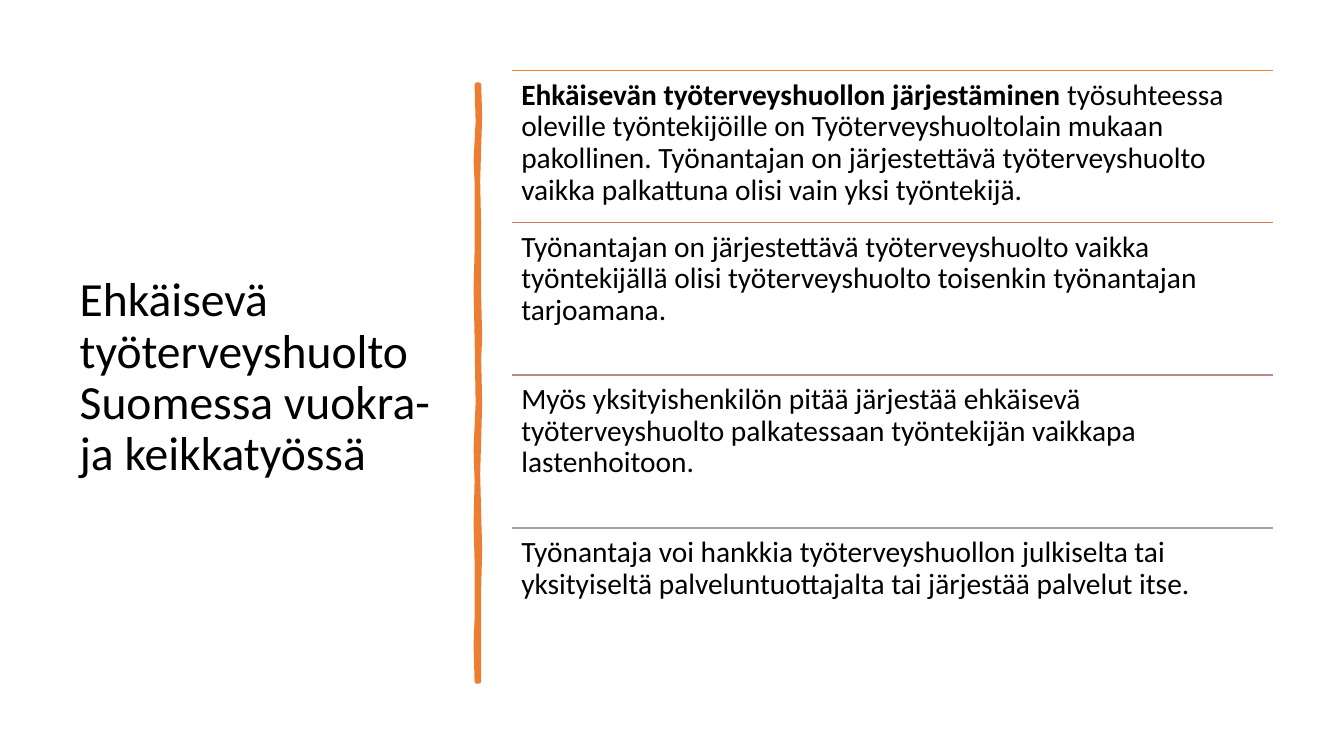
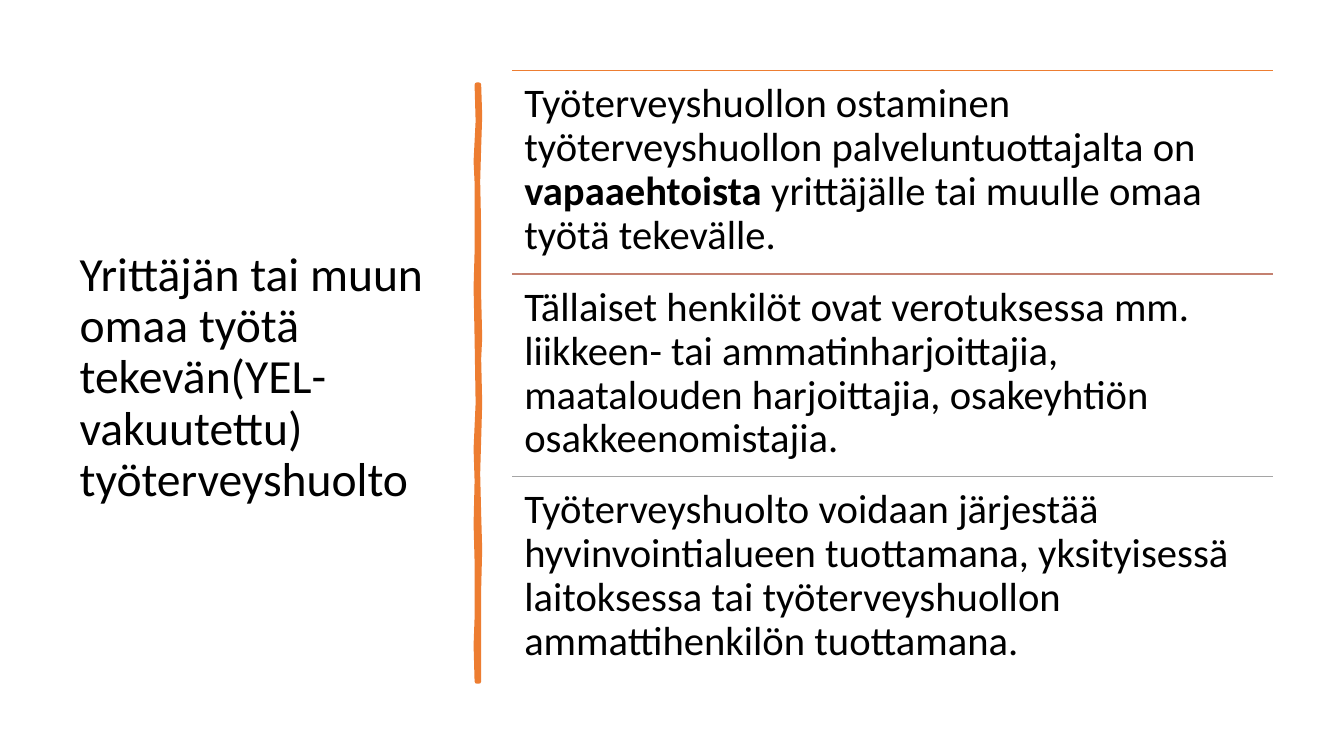
from pptx import Presentation
from pptx.dml.color import RGBColor
from pptx.enum.shapes import MSO_CONNECTOR
from pptx.enum.text import MSO_ANCHOR, MSO_AUTO_SIZE, PP_ALIGN
from pptx.oxml.ns import qn
from pptx.util import Pt
from lxml.etree import SubElement

PX = 9144
BLACK = RGBColor(0x00, 0x00, 0x00)
ORANGE = RGBColor(0xED, 0x7D, 0x31)
RUST = RGBColor(0xD1, 0x7B, 0x5C)
CLAY = RGBColor(0xC4, 0x81, 0x70)
ROSE = RGBColor(0xB9, 0x8A, 0x82)
GREY = RGBColor(0xA5, 0xA5, 0xA5)

LIST_LEFT, LIST_TOP, LIST_WIDTH, LIST_HEIGHT = 508, 70, 755, 605
RIGHT_EDGE = [(475, 84), (476, 115), (475, 146), (474, 180), (475, 226),
              (475, 294), (476, 335), (475, 356), (476, 400), (475, 436),
              (474, 470), (475, 510), (476, 545), (475, 584), (475, 676)]
LEFT_EDGE = [(473, 676), (472, 640), (473, 613), (473, 557), (472, 520),
             (473, 477), (472, 445), (474, 400), (473, 335), (472, 285),
             (473, 250), (473, 181), (472, 160), (474, 120), (473, 84)]


class Deck:
    """Holds the shared style and the slide being built."""

    def __init__(self):
        """Start an empty widescreen deck."""
        self.deck = Presentation()
        self.deck.slide_width, self.deck.slide_height = 1333 * PX, 750 * PX
        self.page = None

    def assign(self, target, values):
        """Set each attribute of the target from a dict."""
        for name, value in values.items():
            setattr(target, name, value)

    def fill_text(self, box, spans, size, anchor, inset=None):
        """Fill a box with one paragraph of (text, bold) spans."""
        frame = box.text_frame
        self.assign(frame, {"word_wrap": True, "vertical_anchor": anchor,
                            "auto_size": MSO_AUTO_SIZE.NONE})
        if inset is not None:
            sides = ("left", "top", "right", "bottom")
            self.assign(frame, {f"margin_{side}": inset * PX for side in sides})
        para = frame.paragraphs[0]
        self.assign(para, {"alignment": PP_ALIGN.LEFT, "line_spacing": 0.9})
        for text, bold in spans:
            span = para.add_run()
            span.text = text
            self.assign(span.font, {"name": "Calibri", "size": Pt(size), "bold": bold})
            span.font.color.rgb = BLACK

    def start_page(self, title):
        """Add a slide with its title at the left."""
        self.page = self.deck.slides.add_slide(self.deck.slide_layouts[5])
        box = self.page.shapes.title
        self.assign(box, {"left": 69 * PX, "top": 70 * PX,
                          "width": 374 * PX, "height": 611 * PX})
        self.fill_text(box, [(title, False)], 34, MSO_ANCHOR.MIDDLE)

    def brush_stroke(self):
        """Draw the uneven upright stroke beside the title."""
        start, *points = RIGHT_EDGE + LEFT_EDGE
        builder = self.page.shapes.build_freeform(*start, scale=PX)
        builder.add_line_segments(points, close=True)
        stroke = builder.convert_to_shape()
        stroke.shadow.inherit = False
        stroke.fill.solid()
        stroke.fill.fore_color.rgb = ORANGE
        stroke.line.color.rgb = ORANGE
        stroke.line.width = Pt(3.25)

    def rule(self, top, color):
        """Draw a thin line across the list."""
        line = self.page.shapes.add_connector(
            MSO_CONNECTOR.STRAIGHT, LIST_LEFT * PX, top * PX,
            (LIST_LEFT + LIST_WIDTH) * PX, top * PX)
        line.line.color.rgb = color
        line.line.width = Pt(1)
        SubElement(line._element.spPr, qn("a:effectLst"))

    def ruled_list(self, rows, colors, size, inset):
        """Stack rows of equal height, each under its own rule."""
        height = LIST_HEIGHT / len(rows)
        for index, (spans, color) in enumerate(zip(rows, colors)):
            top = round(LIST_TOP + index * height)
            self.rule(top, color)
            box = self.page.shapes.add_textbox(
                LIST_LEFT * PX, top * PX, LIST_WIDTH * PX, round(height) * PX)
            self.fill_text(box, spans, size, MSO_ANCHOR.TOP, inset)


PAGES = [
    {"title": "Ehkäisevä työterveyshuolto Suomessa vuokra- ja keikkatyössä",
     "colors": [ORANGE, RUST, ROSE, GREY], "size": 21, "inset": 9,
     "rows": [
         [("Ehkäisevän työterveyshuollon järjestäminen ", True),
          ("työsuhteessa oleville työntekijöille on Työterveyshuoltolain mukaan "
           "pakollinen. Työnantajan on järjestettävä työterveyshuolto vaikka "
           "palkattuna olisi vain yksi työntekijä.", False)],
         [("Työnantajan on järjestettävä työterveyshuolto vaikka työntekijällä "
           "olisi työterveyshuolto toisenkin työnantajan tarjoamana.", False)],
         [("Myös yksityishenkilön pitää järjestää ehkäisevä työterveyshuolto "
           "palkatessaan työntekijän vaikkapa lastenhoitoon.", False)],
         [("Työnantaja voi hankkia työterveyshuollon julkiselta tai yksityiseltä "
           "palveluntuottajalta tai järjestää palvelut itse.", False)]]},
    {"title": "Yrittäjän tai muun omaa työtä tekevän(YEL-vakuutettu) työterveyshuolto",
     "colors": [ORANGE, CLAY, GREY], "size": 29, "inset": 12,
     "rows": [
         [("Työterveyshuollon ostaminen työterveyshuollon palveluntuottajalta on ", False),
          ("vapaaehtoista", True),
          (" yrittäjälle tai muulle omaa työtä tekevälle.", False)],
         [("Tällaiset henkilöt ovat verotuksessa mm. liikkeen- tai "
           "ammatinharjoittajia, maatalouden harjoittajia, osakeyhtiön "
           "osakkeenomistajia.", False)],
         [("Työterveyshuolto voidaan järjestää hyvinvointialueen tuottamana, "
           "yksityisessä laitoksessa tai työterveyshuollon ammattihenkilön "
           "tuottamana.", False)]]},
]


def main():
    """Build every page and save the deck."""
    builder = Deck()
    for content in PAGES:
        builder.start_page(content["title"])
        builder.brush_stroke()
        builder.ruled_list(content["rows"], content["colors"],
                           content["size"], content["inset"])
    builder.deck.save("out.pptx")


if __name__ == "__main__":
    main()
